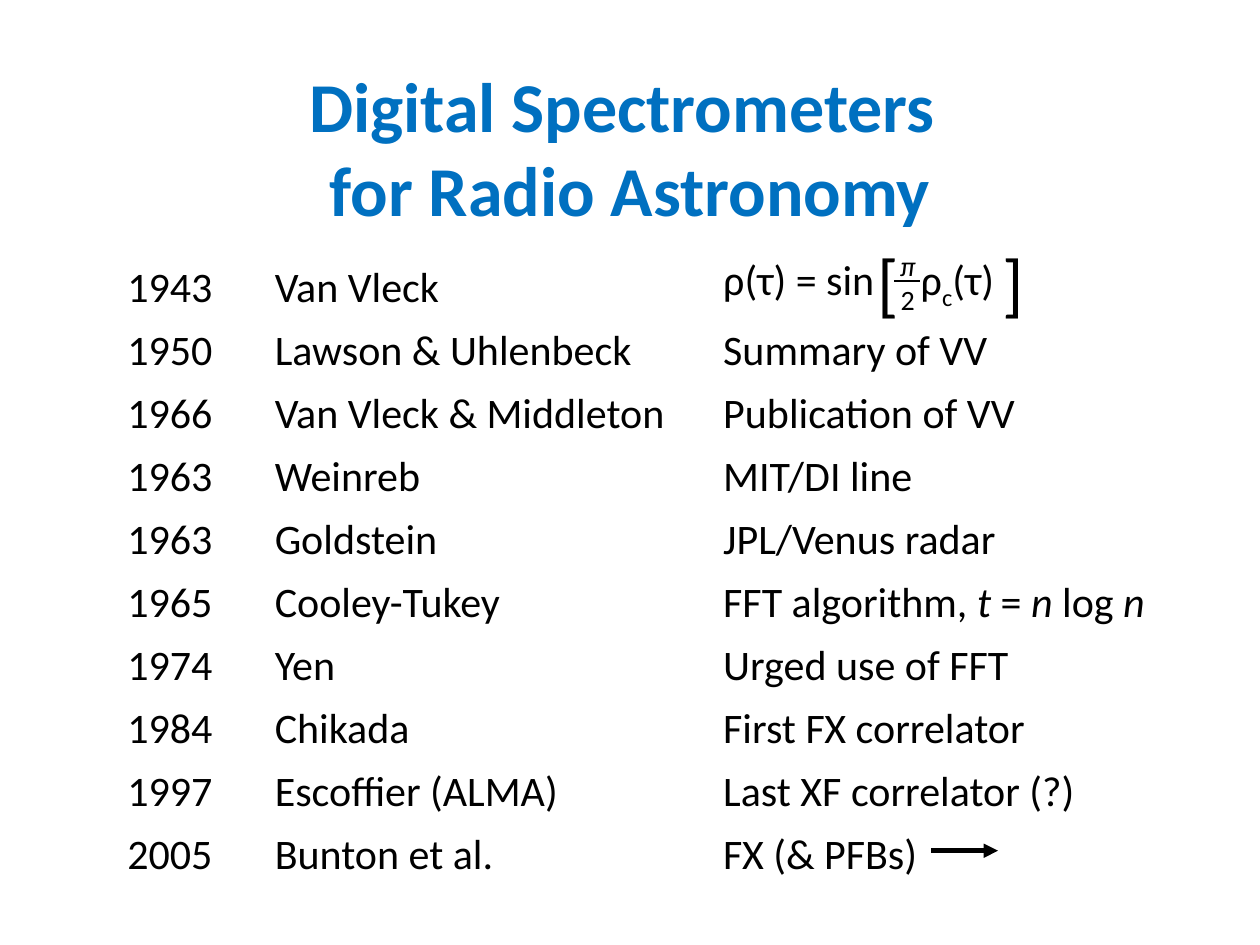
from pptx import Presentation
from pptx.dml.color import RGBColor
from pptx.enum.shapes import MSO_CONNECTOR
from pptx.enum.text import MSO_ANCHOR, PP_ALIGN
from pptx.oxml.ns import qn
from pptx.util import Cm, Pt
from lxml import etree

BLUE = RGBColor(0x00, 0x70, 0xC0)
BLACK = RGBColor(0x00, 0x00, 0x00)
STRAIGHT = MSO_CONNECTOR.STRAIGHT
TOP = MSO_ANCHOR.TOP
LEFT, CENTER = PP_ALIGN.LEFT, PP_ALIGN.CENTER

FONT = "Calibri"
TITLE = {"size": Pt(40), "bold": True}
BODY = {"size": Pt(24)}
FRACTION = {"size": Pt(16)}
BRACKET = {"size": Pt(40)}
ITALIC = {"italic": True}
SUBSCRIPT = {"subscript": True}

# Each row: year, authors, contribution as (text, format) spans
HISTORY = [
    ("1943", "Van Vleck", [("ρ(τ) = sin\tρ", {}), ("c", SUBSCRIPT), ("(τ)", {})]),
    ("1950", "Lawson & Uhlenbeck", [("Summary of VV", {})]),
    ("1966", "Van Vleck & Middleton", [("Publication of VV", {})]),
    ("1963", "Weinreb", [("MIT/DI line", {})]),
    ("1963", "Goldstein", [("JPL/Venus radar", {})]),
    ("1965", "Cooley-Tukey", [("FFT algorithm, ", {}), ("t", ITALIC), (" = ", {}),
                              ("n", ITALIC), (" log ", {}), ("n", ITALIC)]),
    ("1974", "Yen", [("Urged use of FFT", {})]),
    ("1984", "Chikada", [("First FX correlator", {})]),
    ("1997", "Escoffier (ALMA)", [("Last XF correlator (?)", {})]),
    ("2005", "Bunton et al.", [("FX (& PFBs)", {})]),
]


def add_span(para, text, values, color):
    span = para.add_run()
    span.text = text
    span.font.name = FONT
    span.font.color.rgb = color
    for name, value in values.items():
        if name == "subscript":
            span.font._element.set("baseline", "-25000")
        else:
            setattr(span.font, name, value)


def add_text(page, box, lines, base, color=BLACK, align=LEFT, spacing=None):
    """Place a text box; each line is a list of (text, format) spans."""
    frame = page.shapes.add_textbox(*(Cm(length) for length in box)).text_frame
    settings = {"word_wrap": True, "vertical_anchor": TOP, "margin_left": 0,
                "margin_top": 0, "margin_right": 0, "margin_bottom": 0}
    for name, value in settings.items():
        setattr(frame, name, value)
    for index, spans in enumerate(lines):
        para = frame.add_paragraph() if index else frame.paragraphs[0]
        para.alignment = align
        if spacing:
            para.line_spacing = spacing
        for text, values in spans:
            add_span(para, text, {**base, **values}, color)
    return frame


def add_line(page, left, top, length, weight, arrow=False):
    line = page.shapes.add_connector(
        STRAIGHT, Cm(left), Cm(top), Cm(left + length), Cm(top))
    line.line.color.rgb = BLACK
    line.line.width = Pt(weight)
    if arrow:
        etree.SubElement(line.line._get_or_add_ln(), qn("a:tailEnd"), type="triangle")
    etree.SubElement(line._element.spPr, qn("a:effectLst"))


def add_title(page, box):
    lines = [[("Digital Spectrometers ", {})], [("for Radio Astronomy", {})]]
    add_text(page, box, lines, TITLE, BLUE, CENTER, Pt(48))


def add_history(page, box):
    """Three parallel columns: years, authors and contributions."""
    left, top, width, height = box
    years, authors, contributions = zip(*HISTORY)
    columns = [
        (0, 2.01, [[(year, {})] for year in years]),
        (2.97, 8.15, [[(author, {})] for author in authors]),
        (12.01, width - 12.01, contributions),
    ]
    for offset, column_width, lines in columns:
        frame = add_text(page, (left + offset, top, column_width, height),
                         lines, BODY, spacing=Pt(36))
    # Tab stop that leaves room for the fraction in the formula
    properties = frame.paragraphs[0]._p.get_or_add_pPr()
    tabs = etree.SubElement(properties, qn("a:tabLst"))
    etree.SubElement(tabs, qn("a:tab"), pos=str(Cm(3.98)), algn="l")


def add_formula(page, box):
    """Fraction π/2 and the large brackets around the argument."""
    left, top, width, height = box
    bracket_width = 0.79
    add_text(page, (left + 0.18, top + 0.18, 0.84, 1.5),
             [[("π", ITALIC)], [("2", {})]], FRACTION, align=CENTER)
    add_line(page, left + 0.33, top + 0.84, 0.51, 1.25)
    for offset, sign in ((0, "["), (width - bracket_width, "]")):
        add_text(page, (left + offset, top, bracket_width, height),
                 [[(sign, {})]], BRACKET)


def main():
    deck = Presentation()
    deck.slide_width, deck.slide_height = Cm(25.4), Cm(19.05)
    page = deck.slides.add_slide(deck.slide_layouts[6])
    add_title(page, (0, 1.27, 25.4, 3.58))
    add_history(page, (2.57, 5, 20.82, 13.49))
    add_formula(page, (17.7, 4.83, 3.3, 1.93))
    # Arrow pointing onward from the last entry
    add_line(page, 18.77, 17.15, 1.35, 2.75, arrow=True)
    deck.save("out.pptx")


if __name__ == "__main__":
    main()
